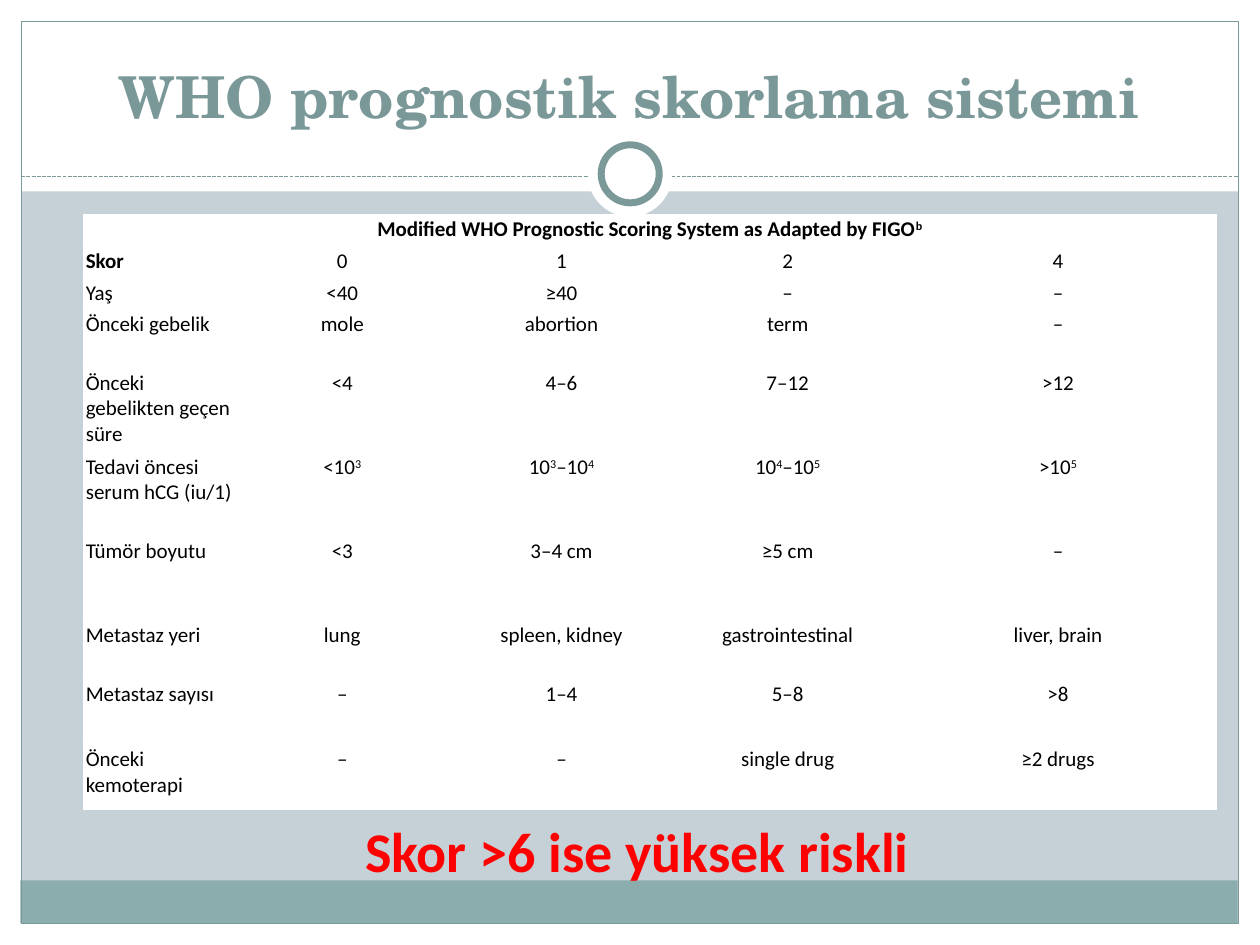
"""Builds the slide with the WHO prognostic scoring table."""
import pptx
import pptx.dml.color
import pptx.enum.dml
import pptx.enum.shapes
import pptx.enum.text
import pptx.util
import lxml.etree

Cm = pptx.util.Cm
Pt = pptx.util.Pt
MSO = pptx.enum.shapes.MSO_SHAPE
ALIGN = pptx.enum.text.PP_ALIGN
FIT = pptx.enum.text.MSO_AUTO_SIZE


def rgb(value):
    return pptx.dml.color.RGBColor.from_string(value)


def style(font, name, size, color, bold):
    font.name = name
    font.size = Pt(size)
    font.color.rgb = rgb(color)
    font.bold = bold


prs = pptx.Presentation()
prs.slide_width = Cm(25.4)
prs.slide_height = Cm(19.05)
s = prs.slides.add_slide(prs.slide_layouts[5])
s.background.fill.solid()
s.background.fill.fore_color.rgb = rgb("C5D1D7")

cn = s.shapes.add_connector(pptx.enum.shapes.MSO_CONNECTOR.STRAIGHT,
                            Cm(0.43), Cm(3.56), Cm(24.97), Cm(3.56))
cn.line.color.rgb = rgb("7C999A")
cn.line.width = Pt(0.75)
cn.line.dash_style = pptx.enum.dml.MSO_LINE.SQUARE_DOT
lxml.etree.SubElement(cn.element.spPr, pptx.oxml.ns.qn("a:effectLst"))

shapes = [
    (MSO.RECTANGLE, 0, 18.62, 25.4, 0.43, "FFFFFF", 0),
    (MSO.RECTANGLE, 0, 0, 25.4, 3.86, "FFFFFF", 0),
    (MSO.RECTANGLE, 0, 0, 0.43, 19.05, "FFFFFF", 0),
    (MSO.RECTANGLE, 24.97, 0, 0.43, 19.05, "FFFFFF", 0),
    (MSO.RECTANGLE, 0.41, 17.75, 24.54, 0.86, "8CADAE", 0),
    (MSO.RECTANGLE, 0.43, 0.43, 24.54, 18.19, None, 0.75),
    (MSO.OVAL, 11.85, 2.67, 1.7, 1.7, "FFFFFF", 0),
    (MSO.OVAL, 12.12, 2.92, 1.17, 1.17, "FFFFFF", 4),
]
for kind, x, y, w, h, fill, line in shapes:
    if kind == MSO.OVAL and not line:
        cn.element.getparent().append(cn.element)
    sp = s.shapes.add_shape(kind, Cm(x), Cm(y), Cm(w), Cm(h))
    sp.shadow.inherit = False
    if fill:
        sp.fill.solid()
        sp.fill.fore_color.rgb = rgb(fill)
    else:
        sp.fill.background()
    if line:
        sp.line.color.rgb = rgb("7C999A")
        sp.line.width = Pt(line)
    else:
        sp.line.fill.background()

title = s.shapes.title
title.element.getparent().append(title.element)
title.left, title.top, title.width, title.height = Cm(0.84), Cm(0.64), Cm(23.7), Cm(2.11)
tf = title.text_frame
tf.text = "WHO prognostik skorlama sistemi"
tf.auto_size = FIT.NONE
tf.vertical_anchor = pptx.enum.text.MSO_ANCHOR.BOTTOM
tf.paragraphs[0].alignment = ALIGN.CENTER
style(tf.paragraphs[0].runs[0].font, "TeX Gyre Schola", 33, "7B9899", True)

rows = [
    ["Modified WHO Prognostic Scoring System as Adapted by FIGO^b^", "", "", "", ""],
    ["Skor", "0", "1", "2", "4"],
    ["Yaş", "<40", "≥40", "–", "–"],
    ["Önceki gebelik", "mole", "abortion", "term", "–"],
    ["Önceki gebelikten geçen süre", "<4", "4–6", "7–12", ">12"],
    ["Tedavi öncesi serum hCG (iu/1)", "<10^3^", "10^3^–10^4^", "10^4^–10^5^", ">10^5^"],
    ["Tümör boyutu", "<3", "3–4 cm", "≥5 cm", "–"],
    ["Metastaz yeri", "lung", "spleen, kidney", "gastrointestinal", "liver, brain"],
    ["Metastaz sayısı", "–", "1–4", "5–8", ">8"],
    ["Önceki kemoterapi", "–", "–", "single drug", "≥2 drugs"],
]
widths = [3.1, 4.24, 4.6, 4.52, 6.38]
heights = [0.64, 0.64, 0.64, 1.17, 1.7, 1.7, 1.7, 1.17, 1.32, 1.32]
tbl = s.shapes.add_table(len(rows), len(widths), Cm(1.68), Cm(4.32),
                         Cm(sum(widths)), Cm(sum(heights))).table
tbl.first_row = False
tbl.horz_banding = False
for col, w in zip(tbl.columns, widths):
    col.width = Cm(w)
for row, h in zip(tbl.rows, heights):
    row.height = Cm(h)
for i, row in enumerate(rows):
    for j, text in enumerate(row):
        cell = tbl.cell(i, j)
        cell.fill.solid()
        cell.fill.fore_color.rgb = rgb("FFFFFF")
        cell.margin_left = cell.margin_right = Cm(0.05)
        cell.margin_top = cell.margin_bottom = Cm(0.05)
        p = cell.text_frame.paragraphs[0]
        p.alignment = ALIGN.CENTER if i == 0 or j else ALIGN.LEFT
        style(p.font, "Calibri", 12, "000000", False)
        for k, part in enumerate(text.split("^")):
            if part:
                r = p.add_run()
                r.text = part
                style(r.font, "Calibri", 12, "000000", i == 0 or (i, j) == (1, 0))
                if k % 2:
                    r.font._element.set("baseline", "30000")
tbl.cell(0, 0).merge(tbl.cell(0, 4))

tf = s.shapes.add_textbox(Cm(7.11), Cm(16.33), Cm(13.41), Cm(1.63)).text_frame
tf.word_wrap = True
tf.auto_size = FIT.SHAPE_TO_FIT_TEXT
tf.text = "Skor >6 ise yüksek riskli"
style(tf.paragraphs[0].runs[0].font, "Calibri", 32, "FF0000", True)

prs.save("out.pptx")
